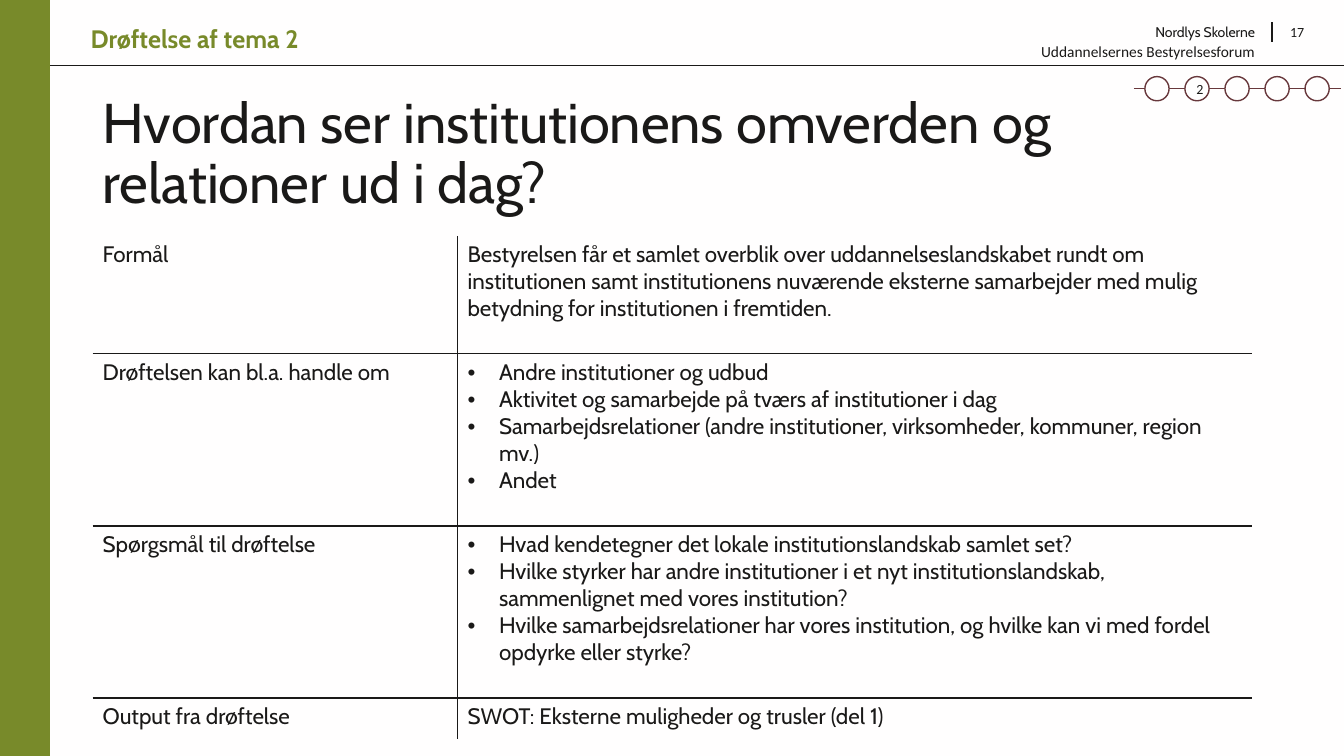
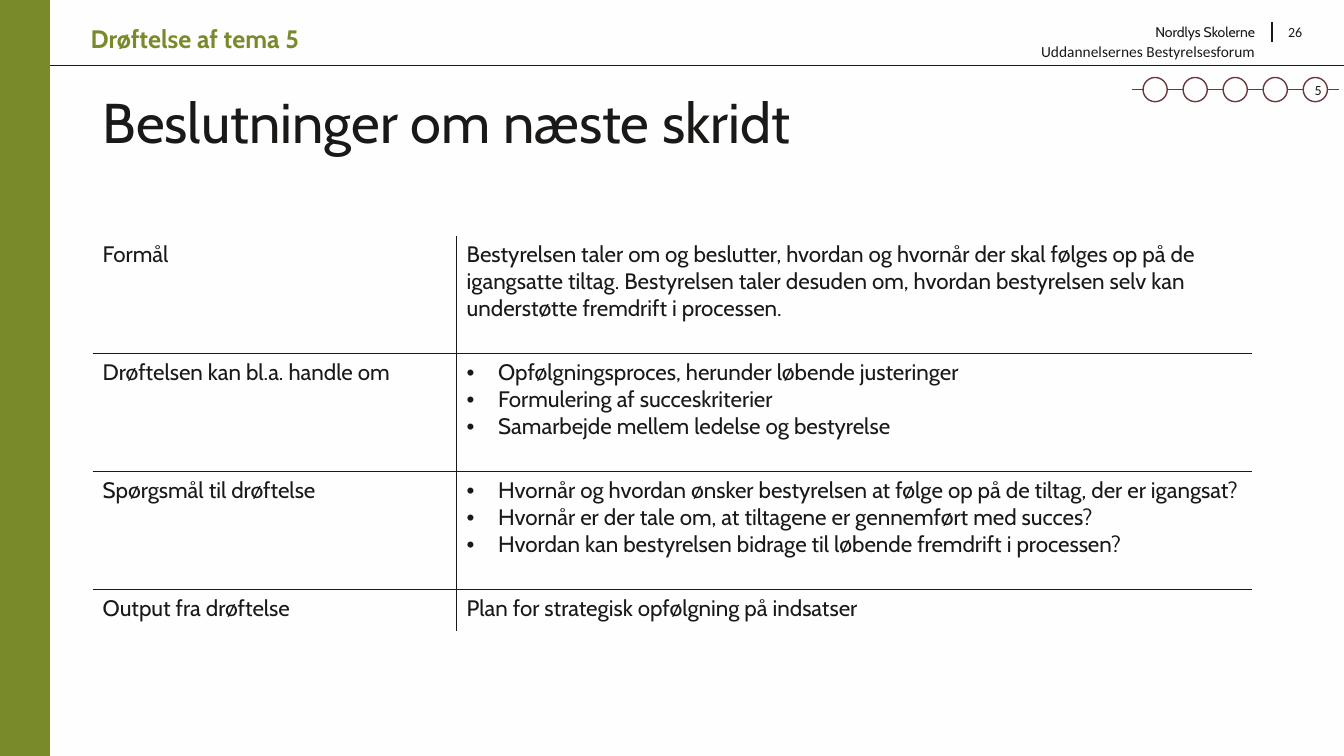
from dataclasses import dataclass

from lxml import etree
from pptx import Presentation
from pptx.dml.color import RGBColor
from pptx.enum.shapes import MSO_CONNECTOR, MSO_SHAPE
from pptx.enum.text import MSO_ANCHOR, MSO_AUTO_SIZE, PP_ALIGN
from pptx.oxml.ns import qn
from pptx.slide import Slide
from pptx.text.text import TextFrame
from pptx.util import Pt

LEFT, RIGHT, CENTER = PP_ALIGN.LEFT, PP_ALIGN.RIGHT, PP_ALIGN.CENTER
TOP, MIDDLE = MSO_ANCHOR.TOP, MSO_ANCHOR.MIDDLE
RECT, OVAL = MSO_SHAPE.RECTANGLE, MSO_SHAPE.OVAL
STRAIGHT = MSO_CONNECTOR.STRAIGHT
FIXED = MSO_AUTO_SIZE.NONE

COLORS = {"ink": "1A1918", "green": "788A2A", "wine": "68383C", "paper": "FFFEFE"}
HEAD, BODY = "Cabin", "Calibri"
WIDTH, HEIGHT = 960, 540
PLAIN = "{2D5ABB26-0587-4C30-8999-92F81FD0307C}"  # table style without grid
LINE, PAD, LEAST = 19.3, 7.1, 29.5  # row height: text line, margins, minimum
RING, STEP, STEPS = 17.3, 28.6, 5
LABELS = ("Formål", "Drøftelsen kan bl.a. handle om",
          "Spørgsmål til drøftelse", "Output fra drøftelse")


@dataclass
class Row:
    lines: int
    texts: list[str]
    listed: bool = False


@dataclass
class Theme:
    step: int
    page: str
    title: str
    rows: list[Row]
    split: float   # width of the label column
    chain: tuple[float, float]  # start of the step chain
    folio: tuple[float, float]  # corner of the page number


def color(name: str) -> RGBColor:
    return RGBColor.from_string(COLORS[name])


def bullet(para) -> None:
    props = para._p.get_or_add_pPr()
    props.set("marL", str(Pt(22.5)))
    props.set("indent", str(-Pt(22.5)))
    etree.SubElement(props, qn("a:buFont")).set("typeface", "Arial")
    etree.SubElement(props, qn("a:buChar")).set("char", "•")


def write(frame: TextFrame, *texts: str, size: float = 10, font: str = BODY,
          ink: str = "ink", bold: bool = False, align=LEFT, anchor=TOP,
          listed: bool = False, space: float | None = None) -> None:
    frame.word_wrap = True
    frame.vertical_anchor = anchor
    for num, text in enumerate(texts):
        para = frame.add_paragraph() if num else frame.paragraphs[0]
        para.alignment = align
        if space:
            para.line_spacing = space
        if listed:
            bullet(para)
        run = para.add_run()
        run.text = text
        run.font.size, run.font.name, run.font.bold = Pt(size), font, bold
        run.font.color.rgb = color(ink)


def label(slide: Slide, text: str, x: float, y: float, w: float, h: float, **style) -> None:
    box = slide.shapes.add_textbox(Pt(x), Pt(y), Pt(w), Pt(h))
    write(box.text_frame, text, **style)


def rule(slide: Slide, x1: float, y1: float, x2: float, y2: float,
         ink: str = "ink", width: float = 1) -> None:
    line = slide.shapes.add_connector(STRAIGHT, Pt(x1), Pt(y1), Pt(x2), Pt(y2))
    line.line.color.rgb = color(ink)
    line.line.width = Pt(width)
    etree.SubElement(line._element.spPr, qn("a:effectLst"))


def block(slide: Slide, kind, x: float, y: float, w: float, h: float,
          fill: str, edge: str):
    shape = slide.shapes.add_shape(kind, Pt(x), Pt(y), Pt(w), Pt(h))
    shape.shadow.inherit = False
    shape.fill.solid()
    shape.fill.fore_color.rgb = color(fill)
    shape.line.color.rgb = color(edge)
    shape.line.width = Pt(1)
    return shape


def border(cell, *sides: str) -> None:
    props = cell._tc.get_or_add_tcPr()
    for num, side in enumerate(sides):
        line = etree.Element(qn(f"a:{side}"), w=str(Pt(1)))
        fill = etree.SubElement(line, qn("a:solidFill"))
        etree.SubElement(fill, qn("a:srgbClr")).set("val", COLORS["ink"])
        props.insert(num, line)


def frame(slide: Slide, theme: Theme) -> None:
    # Header rules, sender and page number
    rule(slide, WIDTH, 46.8, 0, 46.8, width=0.5)
    label(slide, "Nordlys Skolerne", 795.6, 13, 108, 19.4, font=HEAD, align=RIGHT)
    rule(slide, 908.6, 15.8, 908.6, 30.2, width=0.75)
    label(slide, theme.page, *theme.folio, 35.3, 28.8)
    label(slide, "Uddannelsernes Bestyrelsesforum", 736.6, 26.6, 177.8, 20.9, size=11)
    # Green band and theme name
    block(slide, RECT, 0, 0, 35.3, HEIGHT, "green", "green")
    label(slide, f"Drøftelse af tema {theme.step}", 57.6, 13, 229, 28.8,
          size=18, font=HEAD, ink="green", bold=True)


def heading(slide: Slide, text: str) -> None:
    title = slide.shapes.title
    title.left, title.top, title.width, title.height = Pt(66.2), Pt(64), Pt(828), Pt(104.4)
    title.text_frame.auto_size = FIXED
    write(title.text_frame, text, size=40, font=HEAD, space=0.9)


def chain(slide: Slide, theme: Theme) -> None:
    x, y = theme.chain
    rule(slide, x, y, x + 147.6, y, ink="wine")
    for num in range(STEPS):
        ring = block(slide, OVAL, x + 7.8 + num * STEP, y - RING / 2, RING, RING,
                     "paper", "wine")
        if num + 1 == theme.step:
            text = ring.text_frame
            text.margin_left = Pt(4)
            text.margin_right = text.margin_top = text.margin_bottom = 0
            write(text, str(theme.step), align=CENTER, anchor=MIDDLE)


def grid(slide: Slide, theme: Theme) -> None:
    highs = [max(LEAST, PAD + LINE * row.lines) for row in theme.rows]
    shape = slide.shapes.add_table(len(highs), 2, Pt(66.2), Pt(168.5),
                                   Pt(828), Pt(sum(highs)))
    table = shape.table
    table.first_row = table.horz_banding = False
    table._tbl.tblPr.find(qn("a:tableStyleId")).text = PLAIN
    table.columns[0].width = Pt(theme.split)
    table.columns[1].width = Pt(828 - theme.split)
    last = len(highs) - 1
    for num, (row, name, high) in enumerate(zip(theme.rows, LABELS, highs)):
        table.rows[num].height = Pt(high)
        sides = ["lnT"] * (num > 0) + ["lnB"] * (num < last)
        left, right = table.cell(num, 0), table.cell(num, 1)
        write(left.text_frame, name, size=16, font=HEAD)
        write(right.text_frame, *row.texts, size=16, font=HEAD, listed=row.listed)
        for cell, inner in ((left, "lnR"), (right, "lnL")):
            cell.fill.background()
            border(cell, inner, *sides)


THEMES = [
    Theme(2, "17", "Hvordan ser institutionens omverden og relationer ud i dag?", [
        Row(4, ["Bestyrelsen får et samlet overblik over uddannelseslandskabet rundt om "
                "institutionen samt institutionens nuværende eksterne samarbejder med mulig "
                "betydning for institutionen i fremtiden."]),
        Row(6, ["Andre institutioner og udbud",
                "Aktivitet og samarbejde på tværs af institutioner i dag",
                "Samarbejdsrelationer (andre institutioner, virksomheder, kommuner, "
                "region mv.)",
                "Andet"], True),
        Row(6, ["Hvad kendetegner det lokale institutionslandskab samlet set?",
                "Hvilke styrker har andre institutioner i et nyt institutionslandskab, "
                "sammenlignet med vores institution?",
                "Hvilke samarbejdsrelationer har vores institution, og hvilke kan vi med "
                "fordel opdyrke eller styrke?"], True),
        Row(1, ["SWOT: Eksterne muligheder og trusler (del 1)"]),
    ], 260.6, (810, 63.4), (914.4, 13)),
    Theme(5, "26", "Beslutninger om næste skridt", [
        Row(4, ["Bestyrelsen taler om og beslutter, hvordan og hvornår der skal følges op på "
                "de igangsatte tiltag. Bestyrelsen taler desuden om, hvordan bestyrelsen selv "
                "kan understøtte fremdrift i processen."]),
        Row(4, ["Opfølgningsproces, herunder løbende justeringer",
                "Formulering af succeskriterier",
                "Samarbejde mellem ledelse og bestyrelse"], True),
        Row(4, ["Hvornår og hvordan ønsker bestyrelsen at følge op på de tiltag, "
                "der er igangsat?",
                "Hvornår er der tale om, at tiltagene er gennemført med succes?",
                "Hvordan kan bestyrelsen bidrage til løbende fremdrift i processen?"], True),
        Row(1, ["Plan for strategisk opfølgning på indsatser"]),
    ], 260, (808.7, 64), (913, 13.5)),
]


def main() -> None:
    deck = Presentation()
    deck.slide_width, deck.slide_height = Pt(WIDTH), Pt(HEIGHT)
    back = deck.slide_master.background.fill
    back.solid()
    back.fore_color.rgb = color("paper")
    for theme in THEMES:
        slide = deck.slides.add_slide(deck.slide_layouts[5])
        frame(slide, theme)
        heading(slide, theme.title)
        grid(slide, theme)
        chain(slide, theme)
    deck.save("out.pptx")


if __name__ == "__main__":
    main()
